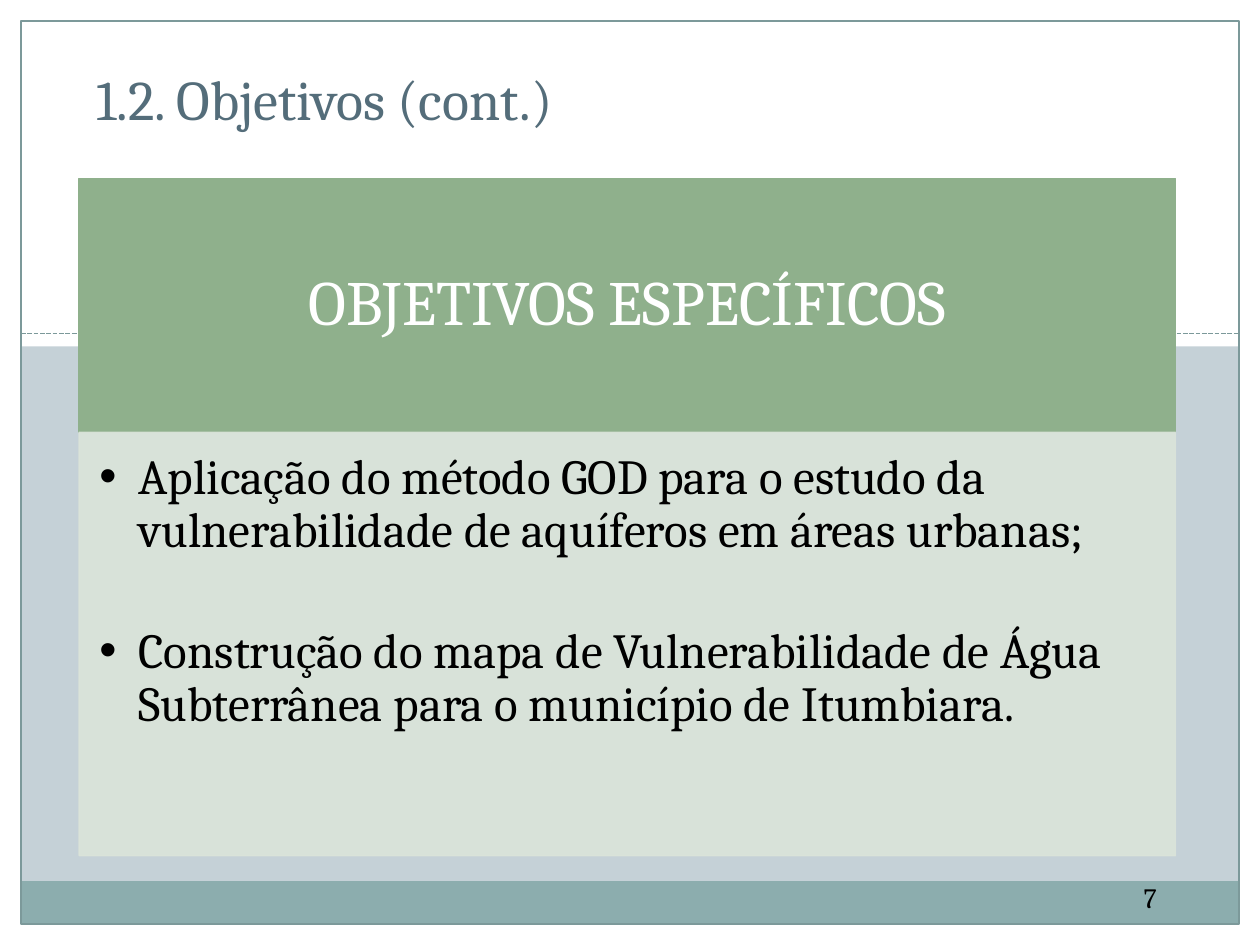
from lxml.etree import SubElement
from pptx import Presentation
from pptx.dml.color import RGBColor
from pptx.enum.dml import MSO_LINE
from pptx.enum.shapes import MSO_CONNECTOR, MSO_SHAPE
from pptx.enum.text import MSO_ANCHOR, PP_ALIGN
from pptx.oxml.ns import qn
from pptx.util import Pt

WIDE, HIGH, EDGE = 720, 540, 12
FONT = "Cambria"
HUES = {
    "back": "C5D1D7", "white": "FFFFFF", "band": "8CADAE", "rule": "7C999A",
    "title": "546D7A", "head": "8FB08C", "body": "DBE4DA", "black": "000000",
}
GOALS = [
    "Aplicação do método GOD para o estudo da vulnerabilidade de aquíferos em áreas urbanas;",
    "Construção do mapa de Vulnerabilidade de Água Subterrânea para o município de Itumbiara.",
]


def hue(name):
    return RGBColor.from_string(HUES[name])


def add_box(slide, area, fill=None, line=None):
    box = slide.shapes.add_shape(MSO_SHAPE.RECTANGLE, *map(Pt, area))
    box.shadow.inherit = False
    if fill:
        box.fill.solid()
        box.fill.fore_color.rgb = hue(fill)
    else:
        box.fill.background()
    if line:
        box.line.color.rgb = hue(line)
        box.line.width = Pt(0.75)
    else:
        box.line.fill.background()
    return box


def add_rule(slide, top):
    rule = slide.shapes.add_connector(
        MSO_CONNECTOR.STRAIGHT, Pt(EDGE), Pt(top), Pt(WIDE - EDGE), Pt(top))
    rule.line.color.rgb = hue("rule")
    rule.line.width = Pt(0.9)
    rule.line.dash_style = MSO_LINE.SQUARE_DOT
    SubElement(rule._element.spPr, qn("a:effectLst"))


def add_label(slide, area):
    return slide.shapes.add_textbox(*map(Pt, area))


def set_text(shape, lines, size, color, align, anchor, pads):
    frame = shape.text_frame
    frame.text = "\n".join(lines)
    frame.word_wrap = True
    frame.vertical_anchor = anchor
    (frame.margin_left, frame.margin_top,
     frame.margin_right, frame.margin_bottom) = map(Pt, pads)
    for para in frame.paragraphs:
        para.alignment = align
        for run in para.runs:
            run.font.name = FONT
            run.font.size = Pt(size)
            run.font.color.rgb = hue(color)
    return frame.paragraphs


def add_bullet(para, indent):
    props = para._p.get_or_add_pPr()
    props.set("marL", str(Pt(indent)))
    props.set("indent", str(-Pt(indent)))
    SubElement(props, qn("a:buFont"), typeface="Arial")
    SubElement(props, qn("a:buChar"), char="•")


def fade(shape, share):
    for color in shape._element.spPr.iter(qn("a:srgbClr")):
        SubElement(color, qn("a:alpha"), val=str(share * 1000))


def add_frame(slide):
    sides = [
        (0, HIGH - EDGE, WIDE, EDGE), (WIDE - EDGE, 0, EDGE, HIGH),
        (0, 0, EDGE, HIGH), (0, 0, WIDE, 198),
    ]
    for side in sides:
        add_box(slide, side, "white")
    add_box(slide, (EDGE, 503.5, WIDE - 2 * EDGE, 24.5), "band")
    add_rule(slide, 190.5)
    add_box(slide, (EDGE, EDGE, WIDE - 2 * EDGE, HIGH - 2 * EDGE), line="rule")


def add_panel(slide):
    left, top, wide, split, base = 45.25, 102, 626.5, 247, 489
    head = add_box(slide, (left, top, wide, split - top), "head", "head")
    paras = set_text(head, ["OBJETIVOS ESPECÍFICOS"], 36, "white",
                     PP_ALIGN.CENTER, MSO_ANCHOR.MIDDLE, (20, 11.5, 20, 11.5))
    paras[0].line_spacing = 0.9
    body = add_box(slide, (left, split, wide, base - split), "body", "body")
    fade(body, 90)
    paras = set_text(body, GOALS, 28, "black", PP_ALIGN.LEFT,
                     MSO_ANCHOR.TOP, (11.5, 11.5, 16, 17))
    for para in paras:
        para.line_spacing = 0.9
        para.space_after = Pt(39)
        add_bullet(para, 22.5)


def main():
    deck = Presentation()
    deck.slide_width, deck.slide_height = Pt(WIDE), Pt(HIGH)
    slide = deck.slides.add_slide(deck.slide_layouts[6])
    slide.background.fill.solid()
    slide.background.fill.fore_color.rgb = hue("back")
    add_frame(slide)
    page = add_label(slide, (611.5, 498.5, 91.5, 29))
    set_text(page, ["7"], 16, "black", PP_ALIGN.CENTER,
             MSO_ANCHOR.MIDDLE, (3.6, 3.6, 3.6, 3.6))
    title = add_label(slide, (48, 36, 612, 43))
    set_text(title, ["1.2. Objetivos (cont.)"], 32, "title", PP_ALIGN.LEFT,
             MSO_ANCHOR.BOTTOM, (7.2, 3.6, 7.2, 3.6))
    add_panel(slide)
    deck.save("out.pptx")


if __name__ == "__main__":
    main()
